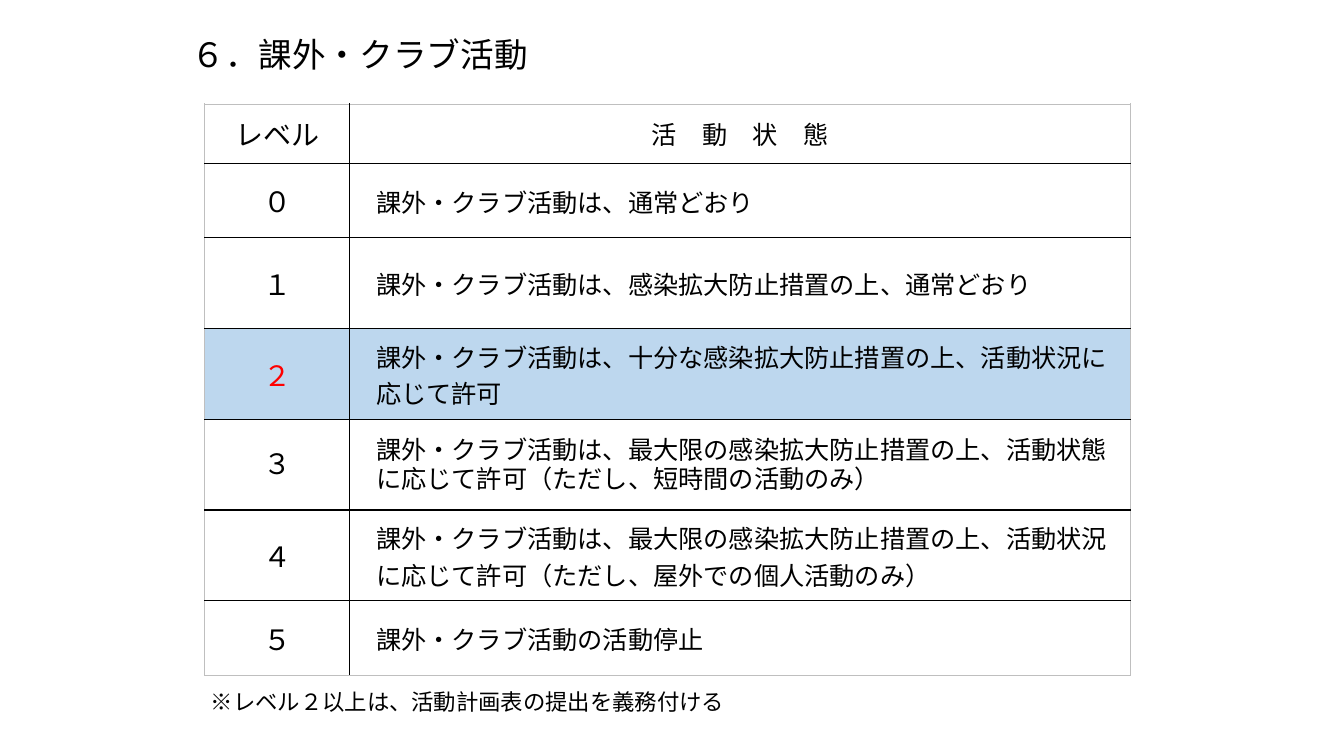
from lxml.etree import SubElement
from pptx import Presentation
from pptx.dml.color import RGBColor
from pptx.enum.shapes import MSO_SHAPE
from pptx.enum.text import MSO_ANCHOR, PP_ALIGN
from pptx.oxml.ns import qn
from pptx.util import Inches, Pt

SANS = "Noto Sans CJK JP"
BLACK, RED, BLUE, GREY = "000000", "FF0000", "BDD7EE", "BFBFBF"

COLS = [1.44, 7.74]
HEAD = ("レベル", "活　動　状　態")
LEVELS = [
    ("０", ["課外・クラブ活動は、通常どおり"]),
    ("１", ["課外・クラブ活動は、感染拡大防止措置の上、通常どおり"]),
    ("２", ["課外・クラブ活動は、十分な感染拡大防止措置の上、活動状況に",
           "応じて許可"]),
    ("３", ["課外・クラブ活動は、最大限の感染拡大防止措置の上、活動状態",
           "に応じて許可（ただし、短時間の活動のみ）"]),
    ("４", ["課外・クラブ活動は、最大限の感染拡大防止措置の上、活動状況",
           "に応じて許可（ただし、屋外での個人活動のみ）"]),
    ("５", ["課外・クラブ活動の活動停止"]),
]
ROWS = [0.59, 0.74, 0.9, 0.9, 0.9, 0.9, 0.74]
MARKED = "２"
FONTS = {"３": "Arial"}


def paint(color, value):
    color.rgb = RGBColor.from_string(value)


def write(frame, lines, size=18, color=BLACK, font=SANS, align=PP_ALIGN.LEFT):
    """Fill a text frame, one paragraph per line, in a single format."""
    for i, line in enumerate(lines):
        para = frame.add_paragraph() if i else frame.paragraphs[0]
        para.alignment = align
        para.line_spacing = 1.0
        para.space_before = Pt(0)
        run = para.add_run()
        run.text = line
        run.font.size = Pt(size)
        run.font.name = font
        paint(run.font.color, color)
        SubElement(run.font._element, qn("a:ea"), typeface=font)


def edge(cell, side, color, width):
    """Draw one border; sides must come before the cell's fill."""
    line = SubElement(cell._tc.get_or_add_tcPr(), qn("a:" + side),
                      w=str(Pt(width)))
    fill = SubElement(line, qn("a:solidFill"))
    SubElement(fill, qn("a:srgbClr"), val=color)


class Page:
    def __init__(self, deck):
        self.slide = deck.slides.add_slide(deck.slide_layouts[5])

    def title(self, text, left, top, width, height):
        box = self.slide.shapes.title
        box.left, box.top = Inches(left), Inches(top)
        box.width, box.height = Inches(width), Inches(height)
        frame = box.text_frame
        frame.word_wrap = False
        frame.vertical_anchor = MSO_ANCHOR.MIDDLE
        write(frame, [text], size=24)

    def table(self, left, top):
        shape = self.slide.shapes.add_table(
            len(ROWS), len(COLS), Inches(left), Inches(top),
            Inches(sum(COLS)), Inches(sum(ROWS)))
        grid = shape.table
        grid.first_row = grid.horz_banding = False
        for col, width in zip(grid.columns, COLS):
            col.width = Inches(width)
        for row, height in zip(grid.rows, ROWS):
            row.height = Inches(height)
        for r in range(len(ROWS)):
            for c in range(len(COLS)):
                self.frame(grid.cell(r, c), r, c)
        for c, text in enumerate(HEAD):
            write(grid.cell(0, c).text_frame, [text],
                  size=18 if c else 20, align=PP_ALIGN.CENTER)
        for r, (level, lines) in enumerate(LEVELS, 1):
            self.level(grid.cell(r, 0), grid.cell(r, 1), level, lines)

    def frame(self, cell, r, c):
        """Set anchor and borders: grey outside, black inside."""
        cell.vertical_anchor = MSO_ANCHOR.MIDDLE
        outer = {"lnL": c == 0, "lnR": c == len(COLS) - 1,
                 "lnT": r == 0, "lnB": r == len(ROWS) - 1}
        for side, out in outer.items():
            edge(cell, side, GREY if out else BLACK, 0.5 if out else 1)
        cell.fill.background()

    def level(self, key, state, level, lines):
        marked = level == MARKED
        font = FONTS.get(level, SANS)
        if marked:
            for cell in (key, state):
                cell.fill.solid()
                paint(cell.fill.fore_color, BLUE)
        write(key.text_frame, [level], size=20, font=font,
              color=RED if marked else BLACK, align=PP_ALIGN.CENTER)
        state.margin_left = state.margin_right = Inches(0.01)
        state.margin_top, state.margin_bottom = Inches(0.01), Inches(0)
        write(state.text_frame, ["　" + line for line in lines], font=font)

    def note(self, text, left, top, width, height):
        box = self.slide.shapes.add_shape(
            MSO_SHAPE.FLOWCHART_PROCESS, Inches(left), Inches(top),
            Inches(width), Inches(height))
        box.shadow.inherit = False
        box.fill.background()
        box.line.fill.background()
        frame = box.text_frame
        frame.word_wrap = True
        frame.vertical_anchor = MSO_ANCHOR.MIDDLE
        write(frame, [text], size=16, align=PP_ALIGN.CENTER)


def main():
    deck = Presentation()
    deck.slide_width, deck.slide_height = Inches(13.33), Inches(7.5)
    page = Page(deck)
    page.title("６．課外・クラブ活動", 1.8, 0.29, 4.11, 0.5)
    page.table(2.03, 1.03)
    page.note("※レベル２以上は、活動計画表の提出を義務付ける",
              0.67, 6.71, 7.94, 0.51)
    deck.save("out.pptx")


if __name__ == "__main__":
    main()
